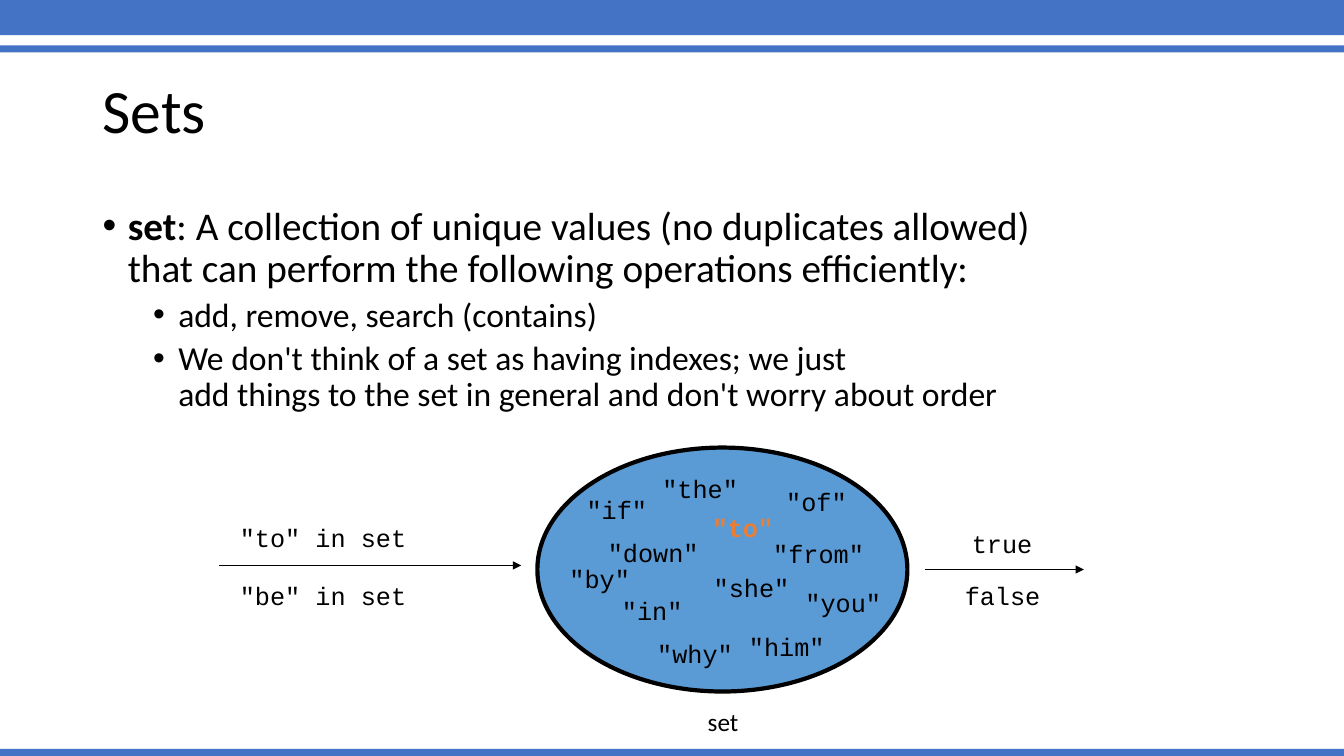
from lxml.etree import SubElement
from pptx import Presentation
from pptx.dml.color import RGBColor
from pptx.enum.shapes import MSO_CONNECTOR, MSO_SHAPE
from pptx.enum.text import MSO_ANCHOR
from pptx.oxml.ns import qn
from pptx.util import Inches, Pt

BLACK = RGBColor(0x00, 0x00, 0x00)
BAND_BLUE = RGBColor(0x44, 0x72, 0xC4)
SET_BLUE = RGBColor(0x5B, 0x9B, 0xD5)
ORANGE = RGBColor(0xED, 0x7D, 0x31)

BANDS = [(-0.03, 0.38), (0.45, 0.07), (7.43, 0.07)]
BULLETS = [
    (0, "set", [": A collection of unique values (no duplicates allowed)",
                "that can perform the following operations efficiently:"]),
    (1, "", ["add, remove, search (contains)"]),
    (1, "", ["We don't think of a set as having indexes; we just ",
             "add things to the set in general and don't worry about order"]),
]
MEMBERS = [
    ("the", 6.47, 4.65), ("of", 7.7, 4.78), ("from", 7.57, 5.29),
    ("she", 6.98, 5.63), ("you", 7.89, 5.78), ("him", 7.33, 6.21),
    ("why", 6.42, 6.28), ("in", 6.07, 5.86), ("down", 5.93, 5.28),
    ("by", 5.55, 5.54), ("if", 5.72, 4.86),
]
CALLS = [('"to" in set', 2.28, 5.13), ('"be" in set', 2.28, 5.71),
         ("true", 9.54, 5.19), ("false", 9.47, 5.71)]
ARROWS = [(2.17, 5.17, 5.61), (9.17, 10.75, 5.65)]


class SlideBuilder:
    """Draws styled elements on the current slide."""

    body_font = "Calibri"
    code_font = "Courier New"

    def __init__(self, slide):
        self.slide = slide

    def style(self, run, size, font=body_font, color=BLACK, bold=False):
        run.font.size = Pt(size)
        run.font.name = font
        run.font.color.rgb = color
        run.font.bold = bold

    def text_box(self, left, top, width, height, wrap=True):
        box = self.slide.shapes.add_textbox(
            Inches(left), Inches(top), Inches(width), Inches(height))
        box.text_frame.word_wrap = wrap
        return box.text_frame

    def shape(self, kind, left, top, width, height, fill, outline=None):
        shape = self.slide.shapes.add_shape(
            kind, Inches(left), Inches(top), Inches(width), Inches(height))
        shape.shadow.inherit = False
        shape.fill.solid()
        shape.fill.fore_color.rgb = fill
        if outline:
            shape.line.color.rgb = BLACK
            shape.line.width = Pt(outline)
        else:
            shape.line.fill.background()

    def title(self, text):
        frame = self.text_box(0.92, 0.4, 11.5, 1.45)
        frame.vertical_anchor = MSO_ANCHOR.MIDDLE
        frame.text = text
        paragraph = frame.paragraphs[0]
        paragraph.line_spacing = 0.9
        self.style(paragraph.runs[0], 44)

    def bullets(self, items):
        frame = self.text_box(0.92, 2, 11.5, 2.3)
        for index, (level, term, lines) in enumerate(items):
            paragraph = frame.add_paragraph() if index else frame.paragraphs[0]
            paragraph.level = level
            paragraph.line_spacing = 0.9
            paragraph.space_before = Pt(5 if level else 10)
            properties = paragraph._p.get_or_add_pPr()
            properties.set("marL", str(Inches(0.25 + 0.5 * level)))
            properties.set("indent", str(Inches(-0.25)))
            SubElement(properties, qn("a:buFont"), typeface="Arial")
            SubElement(properties, qn("a:buChar"), char="•")
            size = 24 if level else 28
            if term:
                run = paragraph.add_run()
                run.text = term
                self.style(run, size, bold=True)
            for number, line in enumerate(lines):
                if number:
                    paragraph.add_line_break()
                run = paragraph.add_run()
                run.text = line
                self.style(run, size)

    def label(self, text, left, top, width, **style):
        frame = self.text_box(left, top, width, 0.4, wrap=False)
        frame.text = text
        self.style(frame.paragraphs[0].runs[0], 18, **style)

    def code(self, text, left, top, **style):
        self.label(text, left, top, 0.2 + 0.15 * len(text),
                   font=self.code_font, **style)

    def arrow(self, start, end, top):
        connector = self.slide.shapes.add_connector(
            MSO_CONNECTOR.STRAIGHT,
            Inches(start), Inches(top), Inches(end), Inches(top))
        connector.line.color.rgb = BLACK
        connector.line.width = Pt(0.75)
        SubElement(connector.line._get_or_add_ln(), qn("a:tailEnd"), type="triangle")
        SubElement(connector._element.spPr, qn("a:effectLst"))


def main():
    presentation = Presentation()
    presentation.slide_width = Inches(13.33)
    presentation.slide_height = Inches(7.5)
    builder = SlideBuilder(
        presentation.slides.add_slide(presentation.slide_layouts[6]))

    for top, height in BANDS:
        builder.shape(MSO_SHAPE.RECTANGLE, 0, top, 13.33, height, BAND_BLUE)
    builder.title("Sets")
    builder.bullets(BULLETS)

    for start, end, top in ARROWS:
        builder.arrow(start, end, top)
    for text, left, top in CALLS:
        builder.code(text, left, top)

    builder.label("set", 6.92, 6.96, 0.51)
    builder.shape(MSO_SHAPE.OVAL, 5.33, 4.44, 3.67, 2.42, SET_BLUE, outline=3)
    for word, left, top in MEMBERS:
        builder.code(f'"{word}"', left, top)
    builder.code('"to"', 6.97, 5.03, color=ORANGE, bold=True)

    presentation.save("out.pptx")


if __name__ == "__main__":
    main()
